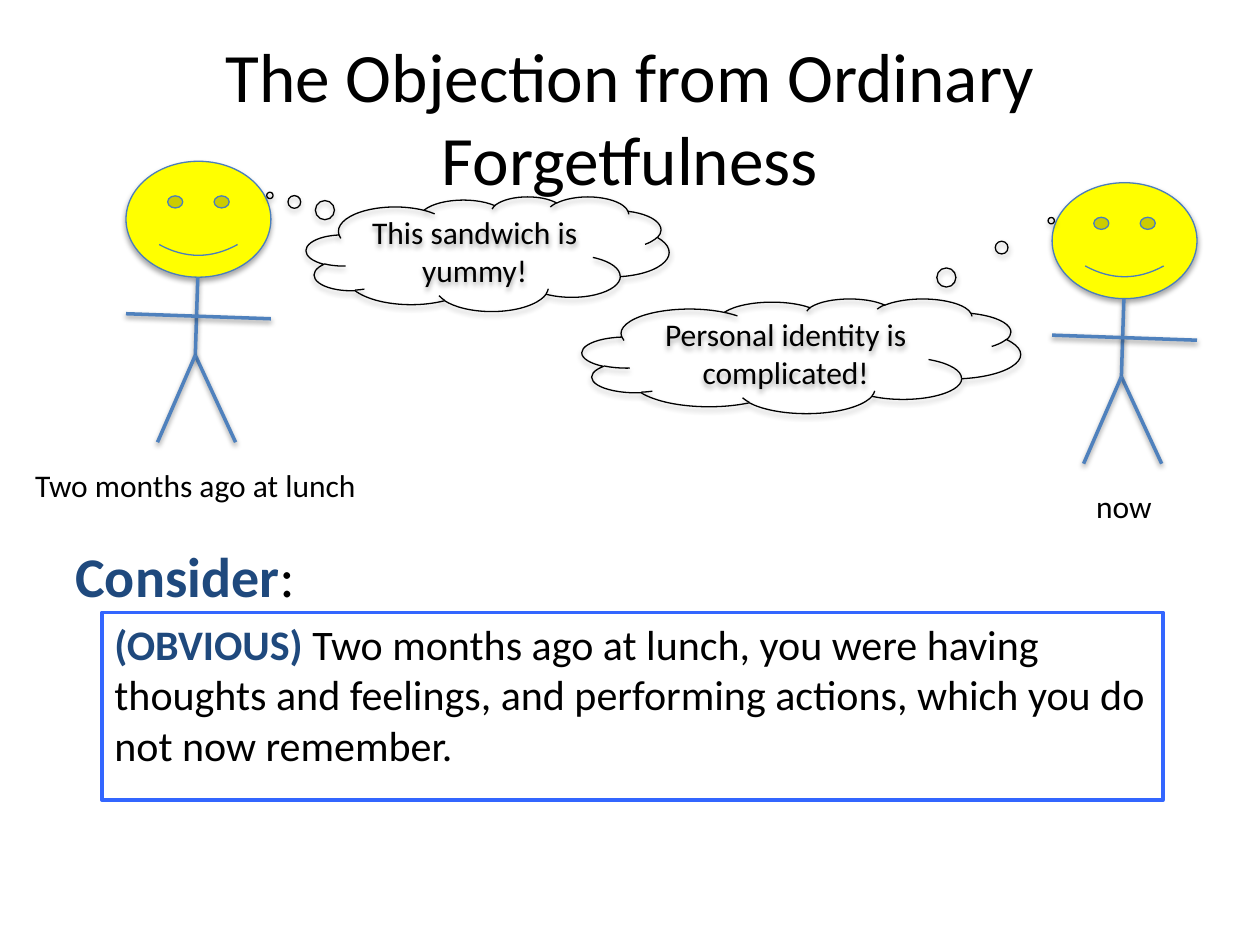
"""Build the slide on the objection from ordinary forgetfulness."""
from lxml import etree
from pptx import Presentation
from pptx.dml.color import RGBColor
from pptx.enum.shapes import MSO_CONNECTOR, MSO_SHAPE
from pptx.enum.text import MSO_ANCHOR, MSO_AUTO_SIZE, PP_ALIGN
from pptx.oxml.ns import qn
from pptx.util import Inches, Pt

LINE = MSO_CONNECTOR.STRAIGHT
FACE, CLOUD, RECT = MSO_SHAPE.SMILEY_FACE, MSO_SHAPE.CLOUD_CALLOUT, MSO_SHAPE.RECTANGLE
LEFT, CENTER = PP_ALIGN.LEFT, PP_ALIGN.CENTER
TOP, MIDDLE = MSO_ANCHOR.TOP, MSO_ANCHOR.MIDDLE
FIT = MSO_AUTO_SIZE.SHAPE_TO_FIT_TEXT
COLORS = {"black": "000000", "navy": "1F497D", "yellow": "FFFF00",
          "edge": "4B7EBC", "limb": "4F81BD", "frame": "3366FF"}


class Sketch:
    def __init__(self, slide, font="Calibri"):
        self.slide = slide
        self.font = font

    def color(self, name):
        return RGBColor.from_string(COLORS[name])

    def shade(self, shape, alpha, dist):
        props = shape._element.spPr
        effects = props.find(qn("a:effectLst"))
        if effects is None:
            effects = etree.SubElement(props, qn("a:effectLst"))
        shadow = etree.SubElement(effects, qn("a:outerShdw"), blurRad=str(Pt(3.1)),
                                  dist=str(Pt(dist)), dir="5400000", rotWithShape="0")
        tint = etree.SubElement(shadow, qn("a:srgbClr"), val=COLORS["black"])
        etree.SubElement(tint, qn("a:alpha"), val=str(alpha * 1000))

    def words(self, shape, runs, size, align=LEFT, anchor=TOP):
        frame = shape.text_frame
        frame.word_wrap = True
        frame.vertical_anchor = anchor
        para = frame.paragraphs[0]
        para.alignment = align
        for text, color, bold in runs:
            run = para.add_run()
            run.text = text
            run.font.name = self.font
            run.font.size = Pt(size)
            run.font.bold = bold
            run.font.color.rgb = self.color(color)

    def text(self, box, runs, size, align=LEFT, anchor=TOP, home=None):
        label = (home or self.slide).shapes.add_textbox(*map(Inches, box))
        self.words(label, runs, size, align, anchor)
        return label

    def shape(self, kind, box, edge, width, fill=None, home=None):
        shape = (home or self.slide).shapes.add_shape(kind, *map(Inches, box))
        shape.shadow.inherit = False
        if fill:
            shape.fill.solid()
            shape.fill.fore_color.rgb = self.color(fill)
        else:
            shape.fill.background()
        shape.line.color.rgb = self.color(edge)
        shape.line.width = Pt(width)
        return shape

    def limb(self, home, start, end):
        line = home.shapes.add_connector(LINE, *map(Inches, start + end))
        line.line.color.rgb = self.color("limb")
        line.line.width = Pt(2)
        self.shade(line, 38, 1.6)

    def person(self, x, y, label, left, width, wrap):
        group = self.slide.shapes.add_group_shape()
        face = self.shape(FACE, (x, y, 1.15, 0.92), "edge", 0.75, "yellow", group)
        self.shade(face, 35, 1.8)
        hip = (x + 0.55, y + 1.54)
        self.limb(group, (x + 0.57, y + 0.92), hip)
        self.limb(group, (x, y + 1.21), (x + 1.15, y + 1.25))
        for foot in (0.87, 0.25):
            self.limb(group, hip, (x + foot, y + 2.23))
        note = self.text((left, y + 2.37, width, 0.4), [(label, "black", False)], 18, home=group)
        note.text_frame.word_wrap = wrap
        note.text_frame.auto_size = FIT

    def thought(self, box, tail, text):
        cloud = self.shape(CLOUD, box, "black", 0.75)
        for i, value in enumerate(tail):
            cloud.adjustments[i] = value
        self.shade(cloud, 35, 1.8)
        self.words(cloud, [(text, "black", False)], 18, CENTER, MIDDLE)


def main():
    deck = Presentation()
    deck.slide_width, deck.slide_height = Inches(10), Inches(7.5)
    art = Sketch(deck.slides.add_slide(deck.slide_layouts[6]))
    art.text((0.5, 0.3, 9, 1.25), [("The Objection from Ordinary Forgetfulness", "black", False)],
             39.6, CENTER, MIDDLE)
    art.text((0.5, 4.25, 9, 2.45), [("Consider", "navy", True), (":", "black", False)], 32)
    art.person(1, 1.28, "Two months ago at lunch", 0.18, 2.8, True)
    art.person(8.35, 1.45, "now", 8.6, 0.65, False)
    art.thought((2.43, 1.56, 2.88, 0.91), (-0.6, -0.51), "This sandwich is yummy!")
    art.thought((4.62, 2.37, 3.48, 0.91), (0.57, -1.18), "Personal identity is complicated!")
    claim = art.shape(RECT, (0.81, 4.86, 8.42, 1.49), "frame", 2)
    art.words(claim, [("(OBVIOUS) ", "navy", True),
                      ("Two months ago at lunch, you were having thoughts and feelings, and "
                       "performing actions, which you do not now remember.", "black", False)], 24)
    deck.save("out.pptx")


if __name__ == "__main__":
    main()
